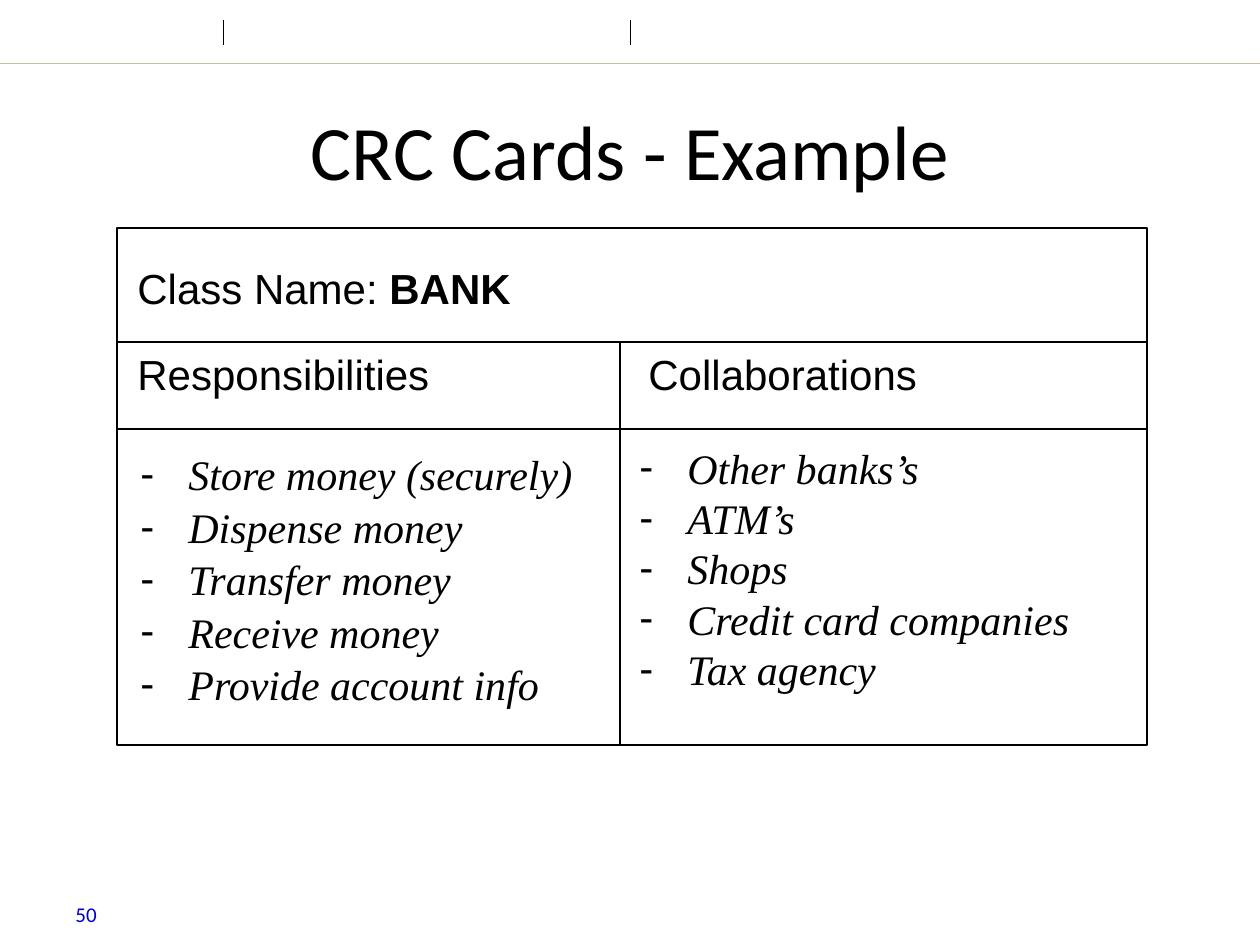
"""Build the CRC card example slide."""
from lxml import etree
from pptx import Presentation
from pptx.dml.color import RGBColor
from pptx.enum.shapes import MSO_CONNECTOR, MSO_SHAPE
from pptx.enum.text import MSO_ANCHOR, PP_ALIGN
from pptx.oxml.ns import qn
from pptx.util import Emu, Pt

RECT, STRAIGHT = MSO_SHAPE.RECTANGLE, MSO_CONNECTOR.STRAIGHT
TOP, MIDDLE = MSO_ANCHOR.TOP, MSO_ANCHOR.MIDDLE
LEFT, CENTER = PP_ALIGN.LEFT, PP_ALIGN.CENTER
PX = 914400 // 126
BLACK, WHITE, BLUE, TAN = "000000", "FFFFFF", "0000CC", "C4BD97"
INDENT = 48

TITLE = "CRC Cards - Example"
CARD_LEFT, CARD_TOP, CARD_RIGHT, CARD_BOTTOM = 117, 228, 1147, 745
NAME_LINE, HEAD_LINE, COLUMN_LINE = 342, 429, 620
RULES = [
    ((0, 63, 1260, 63), TAN, 0.25),
    ((223, 20, 223, 45), BLACK, 0.5),
    ((630, 20, 630, 45), BLACK, 0.5),
]
CARD_RULES = [
    (CARD_LEFT, NAME_LINE, CARD_RIGHT, NAME_LINE),
    (CARD_LEFT, HEAD_LINE, CARD_RIGHT, HEAD_LINE),
    (COLUMN_LINE, NAME_LINE, COLUMN_LINE, CARD_BOTTOM),
]
LABELS = [
    ((125, 256, 428, 86), [("Class Name: ", False), ("BANK", True)]),
    ((125, NAME_LINE, 360, 87), [("Responsibilities", False)]),
    ((636, NAME_LINE, 321, 87), [("Collaborations", False)]),
]
LISTS = [
    ((128, 437, 485, 292), 10, 1.04,
     ["Store money (securely)", "Dispense money", "Transfer money",
      "Receive money", "Provide account info"]),
    ((627, 436, 507, 299), 6, 1.0,
     ["Other banks’s", "ATM’s", "Shops", "Credit card companies", "Tax agency"]),
]


def px(*values):
    return [Emu(v * PX) for v in values]


def rgb(color):
    return RGBColor.from_string(color)


def style(r, size, name, color=BLACK, bold=False, italic=False):
    r.font.size, r.font.name = Pt(size), name
    r.font.bold, r.font.italic = bold, italic
    r.font.color.rgb = rgb(color)


def add_rule(s, ends, color=BLACK, width=0.75):
    line = s.shapes.add_connector(STRAIGHT, *px(*ends))
    line.line.color.rgb = rgb(color)
    line.line.width = Pt(width)
    etree.SubElement(line._element.spPr, qn("a:effectLst"))


def add_rect(s, box, outlined=False):
    sp = s.shapes.add_shape(RECT, *px(*box))
    sp.shadow.inherit = False
    sp.fill.solid()
    sp.fill.fore_color.rgb = rgb(WHITE)
    if outlined:
        sp.line.color.rgb = rgb(BLACK)
        sp.line.width = Pt(0.75)
    else:
        sp.line.fill.background()
    return sp


def add_text(s, box, parts, size, name, color=BLACK, anchor=TOP):
    tf = s.shapes.add_textbox(*px(*box)).text_frame
    tf.word_wrap, tf.vertical_anchor = True, anchor
    for text, bold in parts:
        r = tf.paragraphs[0].add_run()
        r.text = text
        style(r, size, name, color, bold)


def add_list(s, box, inset, spacing, items):
    tf = add_rect(s, box).text_frame
    tf.word_wrap, tf.vertical_anchor = True, TOP
    tf.margin_top = Emu(inset * PX)
    tf.text = "\n".join(items)
    for p in tf.paragraphs:
        p.alignment, p.line_spacing = LEFT, spacing
        pPr = p._p.get_or_add_pPr()
        pPr.set("marL", str(INDENT * PX))
        pPr.set("indent", str(-INDENT * PX))
        etree.SubElement(pPr, qn("a:buFont"), typeface="Arial")
        etree.SubElement(pPr, qn("a:buChar"), char="-")
        style(p.runs[0], 24, "Times New Roman", italic=True)


def main():
    prs = Presentation()
    prs.slide_width, prs.slide_height = px(1260, 945)
    s = prs.slides.add_slide(prs.slide_layouts[5])
    for ends, color, width in RULES:
        add_rule(s, ends, color, width)

    title = s.shapes.title
    title.left, title.top, title.width, title.height = px(63, 63, 1134, 174)
    tf = title.text_frame
    tf.text, tf.vertical_anchor = TITLE, MIDDLE
    tf.paragraphs[0].alignment = CENTER
    style(tf.paragraphs[0].runs[0], 44, "Calibri")

    add_rect(s, (CARD_LEFT, CARD_TOP, CARD_RIGHT - CARD_LEFT,
                 CARD_BOTTOM - CARD_TOP), outlined=True)
    for box, parts in LABELS:
        add_text(s, box, parts, 24, "Arial")
    for entry in LISTS:
        add_list(s, *entry)
    for ends in CARD_RULES:
        add_rule(s, ends)
    add_text(s, (63, 889, 294, 50), [("50", False)], 12, "Calibri", BLUE, MIDDLE)
    prs.save("out.pptx")


if __name__ == "__main__":
    main()
